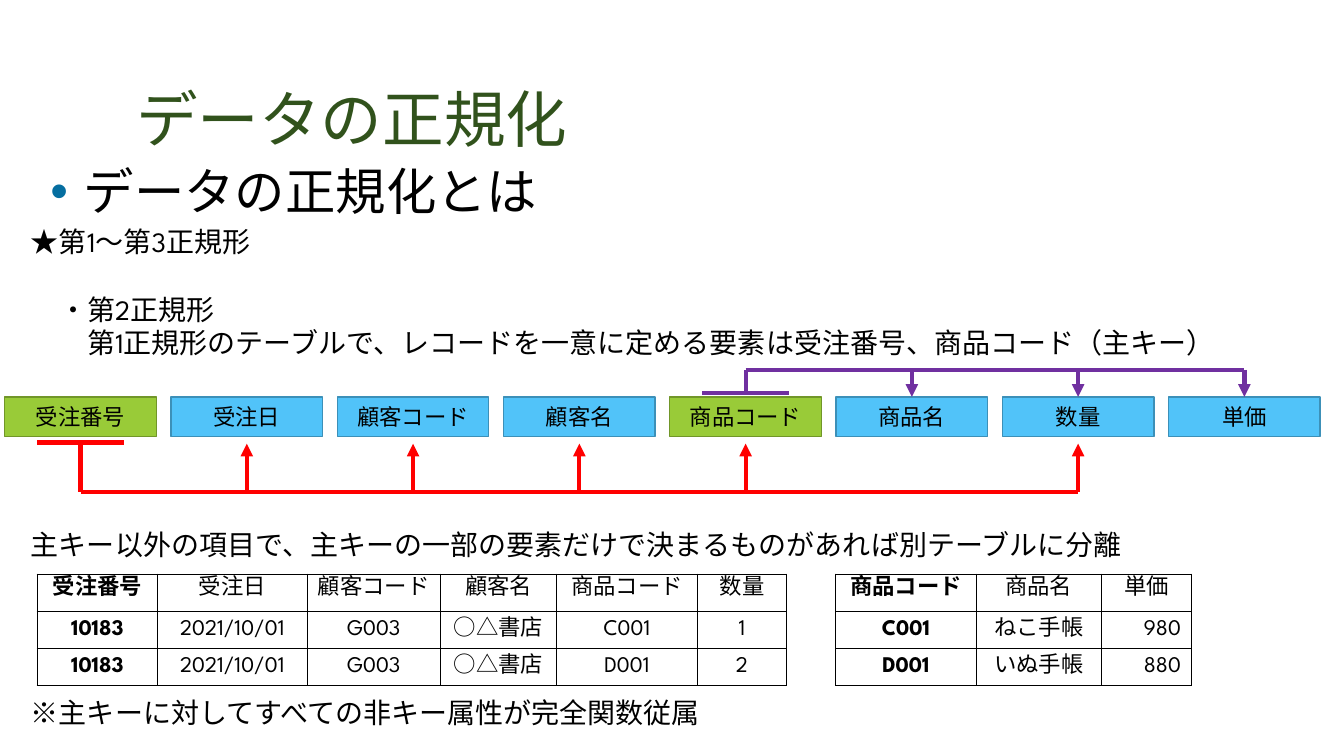
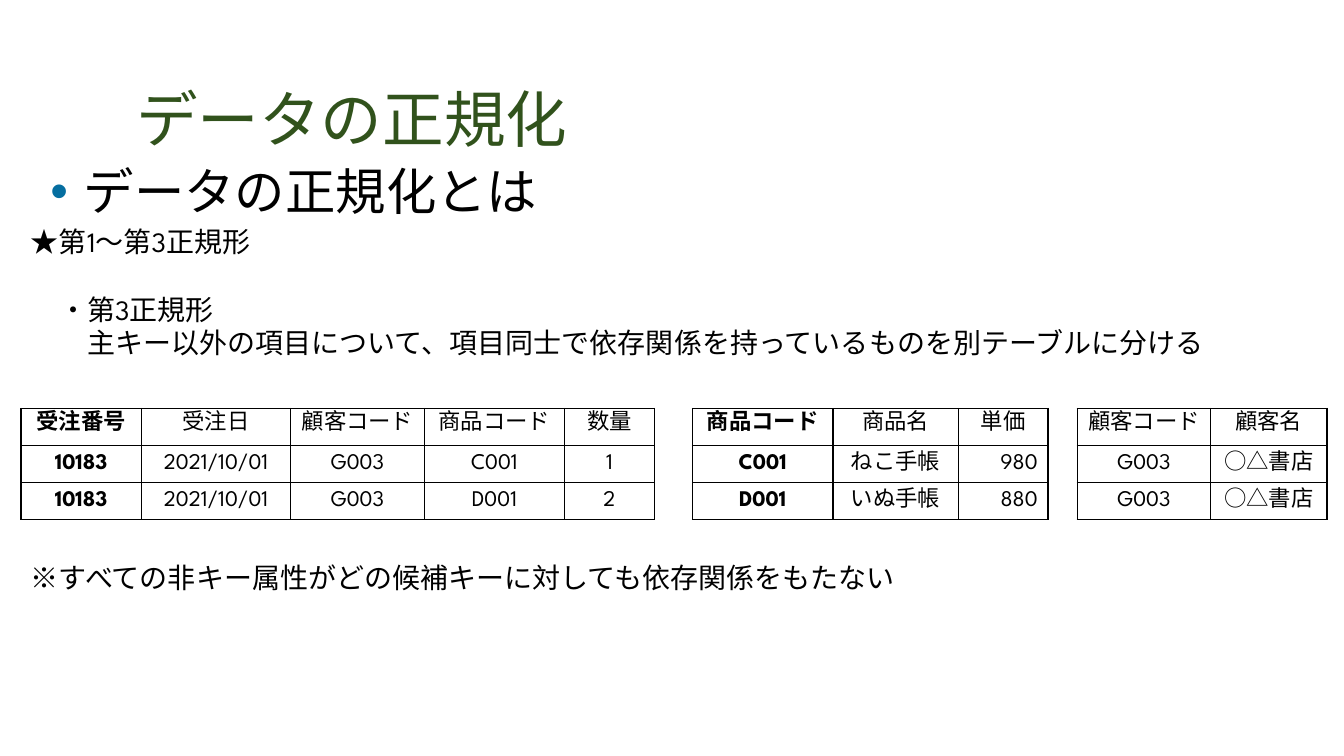
from lxml import etree
from pptx import Presentation
from pptx.dml.color import RGBColor
from pptx.enum.dml import MSO_LINE
from pptx.enum.shapes import MSO_CONNECTOR, MSO_SHAPE
from pptx.enum.text import MSO_ANCHOR, MSO_AUTO_SIZE, PP_ALIGN
from pptx.oxml.ns import qn
from pptx.util import Cm, Pt

BLACK = RGBColor(0x00, 0x00, 0x00)
TITLE_GREEN = RGBColor(0x31, 0x52, 0x1C)
BULLET_BLUE = RGBColor(0x05, 0x6E, 0xA0)
KEY_FILL, KEY_LINE = RGBColor(0x99, 0xCB, 0x38), RGBColor(0x71, 0x96, 0x29)
ITEM_FILL, ITEM_LINE = RGBColor(0x51, 0xC3, 0xF9), RGBColor(0x3C, 0x90, 0xB8)
RED = RGBColor(0xFF, 0x00, 0x00)
PURPLE = RGBColor(0x70, 0x30, 0xA0)

HEADING_FONT = "Noto Sans CJK JP"
BODY_FONT = "League Spartan"

TITLE = "データの正規化"
HEADING = "データの正規化とは"
TOPIC = "★第1～第3正規形"

COLUMN_WIDTHS = {
    "受注番号": 3.03, "受注日": 3.77, "顧客コード": 3.36, "顧客名": 2.93,
    "商品コード": 3.54, "商品名": 3.16, "数量": 2.26, "単価": 2.26,
}
FIELDS = list(COLUMN_WIDTHS)
PRIMARY_KEYS = ("受注番号", "商品コード")
RECORDS = [
    dict(zip(FIELDS, row)) for row in (
        ("10183", "2021/10/01", "G003", "○△書店", "C001", "ねこ手帳", "1", "980"),
        ("10183", "2021/10/01", "G003", "○△書店", "D001", "いぬ手帳", "2", "880"),
    )
]

DEPENDENCIES = [
    dict(source="受注番号", color=RED, underline=11.15, bus=12.4, tip=11.18, joined=False,
         targets=("受注日", "顧客コード", "顧客名", "商品コード", "数量")),
    dict(source="商品コード", color=PURPLE, underline=9.91, bus=9.32, tip=10.0, joined=True,
         targets=("商品名", "数量", "単価")),
]

SLIDES = [
    dict(
        lines=[
            ("・第2正規形", 1, 1),
            ("第1正規形のテーブルで、レコードを一意に定める要素は受注番号、商品コード（主キー）", 2, 0),
            ("主キー以外の項目で、主キーの一部の要素だけで決まるものがあれば別テーブルに分離", 0, 5),
            ("※主キーに対してすべての非キー属性が完全関数従属", 0, 4),
        ],
        dependencies=DEPENDENCIES,
        table_top=14.47,
        tables=[
            (0.94, "受注番号", ("受注番号", "受注日", "顧客コード", "顧客名", "商品コード", "数量")),
            (21.06, "商品コード", ("商品コード", "商品名", "単価")),
        ],
    ),
    dict(
        lines=[
            ("・第3正規形", 1, 1),
            ("主キー以外の項目について、項目同士で依存関係を持っているものを別テーブルに分ける", 2, 0),
            ("※すべての非キー属性がどの候補キーに対しても依存関係をもたない", 0, 6),
        ],
        dependencies=[],
        table_top=10.29,
        tables=[
            (0.53, "受注番号", ("受注番号", "受注日", "顧客コード", "商品コード", "数量")),
            (17.45, "商品コード", ("商品コード", "商品名", "単価")),
            (27.15, None, ("顧客コード", "顧客名")),
        ],
    ),
]

ROW_HEIGHT = 0.93
FIELD_LEFT, FIELD_TOP, FIELD_WIDTH, FIELD_HEIGHT, FIELD_PITCH = 0.12, 10.0, 3.82, 1.0, 4.19
UNDERLINE_WIDTH = 2.18
LINE_POINTS = 24
INDENT = 0.71


def write(paragraph, text, size=16, font=BODY_FONT, color=BLACK, bold=False,
          align=PP_ALIGN.LEFT, before=0, spacing=None, indent=0):
    run = paragraph.add_run()
    run.text = text
    run.font.name = font
    run.font.size = Pt(size)
    run.font.bold = bold
    run.font.color.rgb = color
    east_asian = etree.SubElement(run._r.get_or_add_rPr(), qn("a:ea"))
    east_asian.set("typeface", font)
    paragraph.alignment = align
    paragraph.space_before = Pt(before)
    if spacing:
        paragraph.line_spacing = spacing
    if indent:
        paragraph._p.get_or_add_pPr().set("marL", str(Cm(indent)))


def set_insets(frame):
    frame.word_wrap = True
    frame.auto_size = MSO_AUTO_SIZE.NONE
    frame.margin_left = frame.margin_right = Cm(0.33)
    frame.margin_top = frame.margin_bottom = Cm(0.18)


def add_bullet(paragraph, color):
    properties = paragraph._p.get_or_add_pPr()
    properties.set("marL", str(Cm(0.84)))
    properties.set("indent", str(-Cm(0.84)))
    bullet_color = etree.SubElement(properties, qn("a:buClr"))
    etree.SubElement(bullet_color, qn("a:srgbClr")).set("val", str(color))
    etree.SubElement(properties, qn("a:buFont")).set("typeface", "Arial")
    etree.SubElement(properties, qn("a:buChar")).set("char", "•")


def add_headings(slide):
    title = slide.shapes.title
    title.left, title.top, title.width, title.height = Cm(3.1), Cm(0.2), Cm(28.22), Cm(3.89)
    set_insets(title.text_frame)
    title.text_frame.vertical_anchor = MSO_ANCHOR.BOTTOM
    write(title.text_frame.paragraphs[0], TITLE, size=44, font=HEADING_FONT,
          color=TITLE_GREEN, spacing=0.85)
    heading = slide.shapes.add_textbox(Cm(0.94), Cm(3.96), Cm(32), Cm(1.6)).text_frame
    set_insets(heading)
    write(heading.paragraphs[0], HEADING, size=36, font=HEADING_FONT, spacing=0.95)
    add_bullet(heading.paragraphs[0], BULLET_BLUE)


def add_explanation(slide, lines):
    explanation = slide.shapes.add_textbox(Cm(0.53), Cm(5.54), Cm(32.79), Cm(13)).text_frame
    explanation.word_wrap = True
    write(explanation.paragraphs[0], TOPIC, size=20)
    for text, level, gap in lines:
        write(explanation.add_paragraph(), text, size=20,
              before=gap * LINE_POINTS, indent=level * INDENT)


def add_field(slide, index, field):
    box = slide.shapes.add_shape(
        MSO_SHAPE.RECTANGLE, Cm(FIELD_LEFT + index * FIELD_PITCH), Cm(FIELD_TOP),
        Cm(FIELD_WIDTH), Cm(FIELD_HEIGHT))
    is_key = field in PRIMARY_KEYS
    box.shadow.inherit = False
    box.fill.solid()
    box.fill.fore_color.rgb = KEY_FILL if is_key else ITEM_FILL
    box.line.color.rgb = KEY_LINE if is_key else ITEM_LINE
    box.line.width = Pt(1)
    box.text_frame.vertical_anchor = MSO_ANCHOR.MIDDLE
    write(box.text_frame.paragraphs[0], field, align=PP_ALIGN.CENTER)
    return box


def add_line(slide, start, end, color, arrow=False):
    line = slide.shapes.add_connector(MSO_CONNECTOR.STRAIGHT, *start, *end)
    line.line.color.rgb = color
    line.line.width = Pt(3)
    line.line.dash_style = MSO_LINE.SOLID
    if arrow:
        etree.SubElement(line.line._get_or_add_ln(), qn("a:tailEnd")).set("type", "triangle")
    etree.SubElement(line._element.spPr, qn("a:effectLst"))
    return line


def add_dependency(slide, boxes, source, targets, color, underline, bus, tip, joined):
    centers = {field: box.left + box.width // 2 for field, box in boxes.items()}
    start, half = centers[source], Cm(UNDERLINE_WIDTH / 2)
    underline, bus, tip = Cm(underline), Cm(bus), Cm(tip)
    add_line(slide, (start - half, underline), (start + half, underline), color)
    add_line(slide, (start, underline), (start, bus), color)
    add_line(slide, (start, bus), (centers[targets[-1]], bus), color)
    for target in targets:
        arrow = add_line(slide, (centers[target], bus), (centers[target], tip), color, arrow=True)
        if joined:
            arrow.end_connect(boxes[target], 0)


def add_borders(cell):
    properties = cell._tc.get_or_add_tcPr()
    for position, side in enumerate(("a:lnL", "a:lnR", "a:lnT", "a:lnB")):
        border = etree.Element(qn(side), w=str(Pt(1)))
        fill = etree.SubElement(border, qn("a:solidFill"))
        etree.SubElement(fill, qn("a:srgbClr")).set("val", str(BLACK))
        properties.insert(position, border)


def add_records(slide, left, top, key, fields):
    rows = [dict(zip(fields, fields))] + RECORDS
    width = sum(COLUMN_WIDTHS[field] for field in fields)
    table = slide.shapes.add_table(len(rows), len(fields), Cm(left), Cm(top), Cm(width),
                                   Cm(ROW_HEIGHT * len(rows))).table
    table.first_row = table.horz_banding = False
    for column, field in enumerate(fields):
        table.columns[column].width = Cm(COLUMN_WIDTHS[field])
        for row, record in enumerate(rows):
            cell = table.cell(row, column)
            cell.fill.background()
            add_borders(cell)
            cell.vertical_anchor = MSO_ANCHOR.MIDDLE if row else MSO_ANCHOR.TOP
            is_price = row and field == "単価"
            write(cell.text_frame.paragraphs[0], record[field], bold=field == key,
                  align=PP_ALIGN.RIGHT if is_price else PP_ALIGN.CENTER)


def main():
    deck = Presentation()
    deck.slide_width, deck.slide_height = Cm(33.87), Cm(19.05)
    for content in SLIDES:
        slide = deck.slides.add_slide(deck.slide_layouts[5])
        add_headings(slide)
        add_explanation(slide, content["lines"])
        if content["dependencies"]:
            boxes = {field: add_field(slide, index, field) for index, field in enumerate(FIELDS)}
            for dependency in content["dependencies"]:
                add_dependency(slide, boxes, **dependency)
        for left, key, fields in content["tables"]:
            add_records(slide, left, content["table_top"], key, fields)
    deck.save("out.pptx")


if __name__ == "__main__":
    main()
